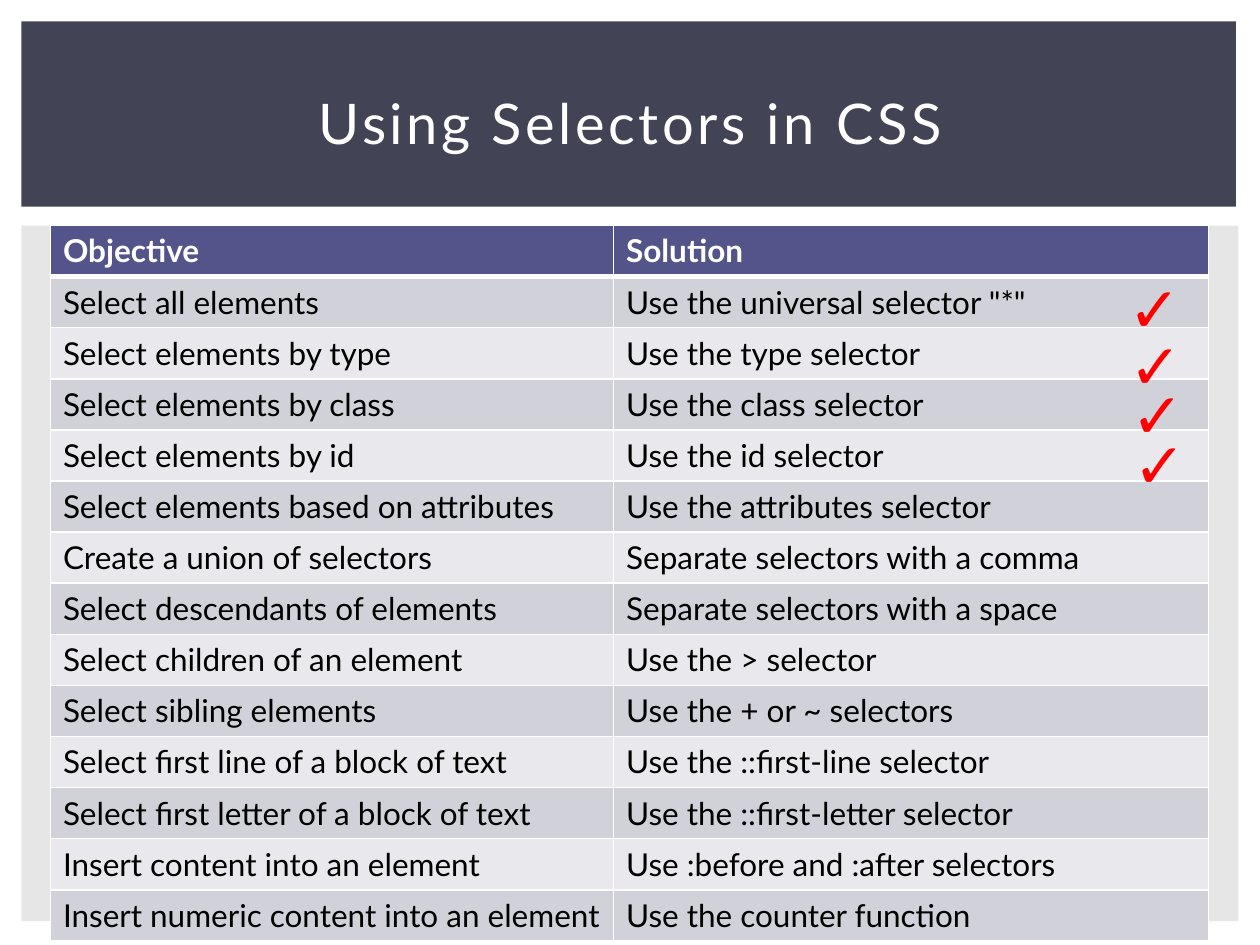
"""Builds a slide listing CSS selector objectives and their solutions."""
from lxml.etree import SubElement
from pptx import Presentation
from pptx.dml.color import RGBColor
from pptx.enum.shapes import MSO_SHAPE
from pptx.enum.text import MSO_ANCHOR, PP_ALIGN
from pptx.oxml.ns import qn
from pptx.util import Inches, Pt

COLORS = {
    "panel": "E6E6E6", "banner": "424456", "header": "53548A",
    "odd": "D1D1DA", "even": "E9E9ED", "white": "FFFFFF",
    "black": "000000", "check": "FF0000",
}
ROWS = [
    ("Objective", "Solution"),
    ("Select all elements", 'Use the universal selector "*"'),
    ("Select elements by type", "Use the type selector"),
    ("Select elements by class", "Use the class selector"),
    ("Select elements by id", "Use the id selector"),
    ("Select elements based on attributes", "Use the attributes selector"),
    ("Create a union of selectors", "Separate selectors with a comma"),
    ("Select descendants of elements", "Separate selectors with a space"),
    ("Select children of an element", "Use the > selector"),
    ("Select sibling elements", "Use the + or ~ selectors"),
    ("Select first line of a block of text", "Use the ::first-line selector"),
    ("Select first letter of a block of text", "Use the ::first-letter selector"),
    ("Insert content into an element", "Use :before and :after selectors"),
    ("Insert numeric content into an element", "Use the counter function"),
]
CHECKS = [(8.86, 2.09), (8.87, 2.54), (8.88, 2.93), (8.9, 3.33)]


def write(tf, text, size, color, bold=False):
    tf.text = text
    r = tf.paragraphs[0].runs[0]
    r.font.name = "Lato"
    r.font.size = Pt(size)
    r.font.bold = bold
    r.font.color.rgb = RGBColor.from_string(COLORS[color])
    return r


def set_borders(cell, widths):
    tcPr = cell._tc.get_or_add_tcPr()
    for side, width in zip("LRTB", widths):
        ln = SubElement(tcPr, qn(f"a:ln{side}"), w=str(Pt(width)))
        fill = SubElement(ln, qn("a:solidFill"))
        SubElement(fill, qn("a:srgbClr"), val=COLORS["white"])


prs = Presentation()
prs.slide_width = Inches(10)
prs.slide_height = Inches(7.5)
s = prs.slides.add_slide(prs.slide_layouts[6])

for top, width, height, color in [(1.79, 9.66, 5.52, "panel"), (0.17, 9.64, 1.47, "banner")]:
    sp = s.shapes.add_shape(MSO_SHAPE.RECTANGLE, Inches(0.17), Inches(top), Inches(width), Inches(height))
    sp.shadow.inherit = False
    sp.fill.solid()
    sp.fill.fore_color.rgb = RGBColor.from_string(COLORS[color])
    sp.line.fill.background()

table = s.shapes.add_table(len(ROWS), 2, Inches(0.4), Inches(1.79), Inches(9.19), Inches(5.68)).table
table.columns[0].width = Inches(4.47)
table.columns[1].width = Inches(4.72)
for i, row in enumerate(ROWS):
    table.rows[i].height = Inches(5.68 / len(ROWS))
    header = i == 0
    color = "header" if header else "odd" if i % 2 else "even"
    for j, text in enumerate(row):
        cell = table.cell(i, j)
        write(cell.text_frame, text, 18, "white" if header else "black", header)
        set_borders(cell, (1, 1, 3 if i == 1 else 1, 3 if header else 1))
        cell.fill.solid()
        cell.fill.fore_color.rgb = RGBColor.from_string(COLORS[color])

sp = s.shapes.add_textbox(Inches(0.42), Inches(0.39), Inches(9.17), Inches(1.15))
tf = sp.text_frame
r = write(tf, "Using Selectors in CSS", 32, "white")
r.font._element.set("spc", "200")
tf.word_wrap = True
tf.vertical_anchor = MSO_ANCHOR.MIDDLE
tf.paragraphs[0].alignment = PP_ALIGN.CENTER

for left, top in CHECKS:
    sp = s.shapes.add_textbox(Inches(left), Inches(top), Inches(0.6), Inches(0.71))
    write(sp.text_frame, "✓", 36, "check")
    sp.text_frame.word_wrap = True

prs.save("out.pptx")
